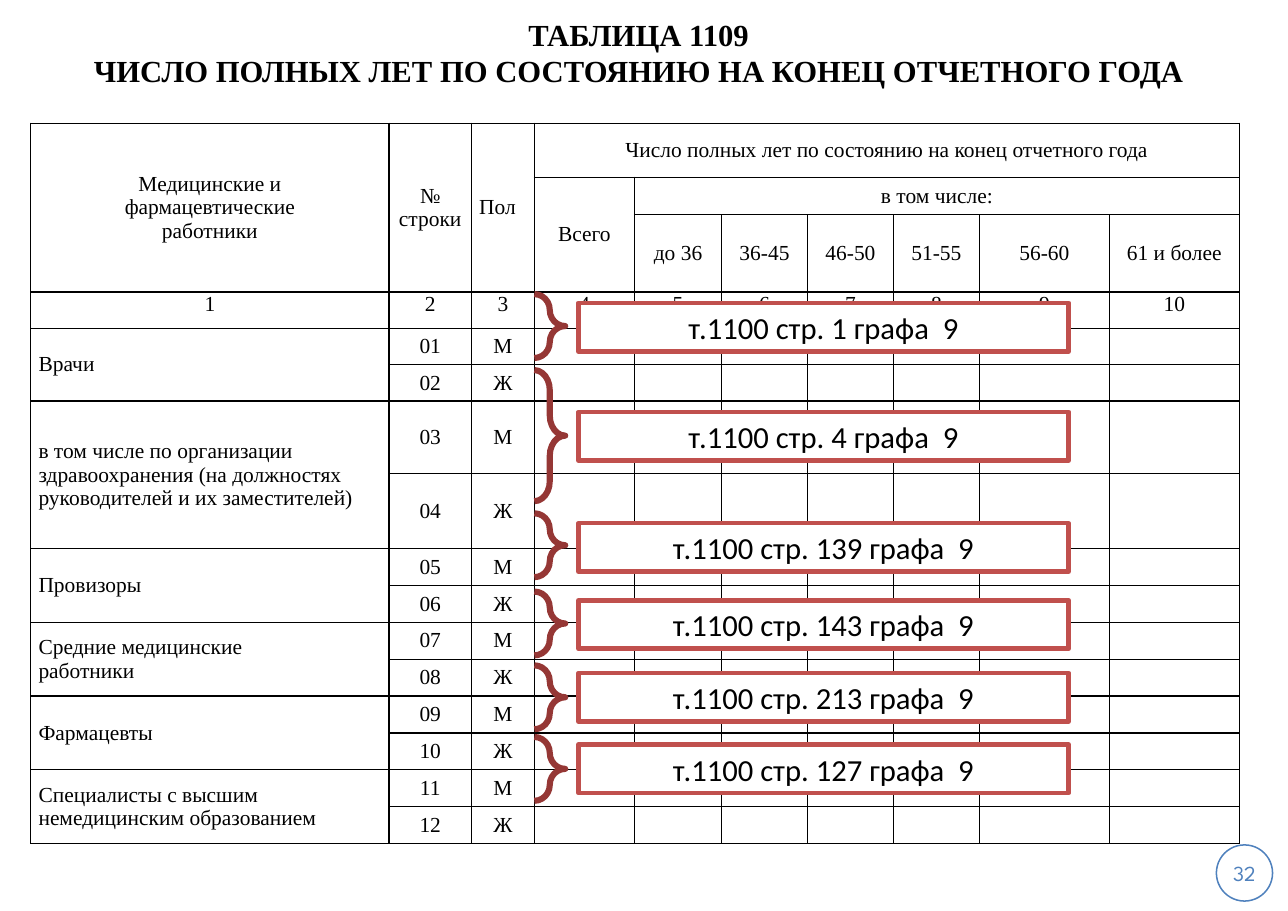
from lxml import etree
from pptx import Presentation
from pptx import util as u
from pptx.dml.color import RGBColor
from pptx.enum import shapes, text
from pptx.oxml.ns import qn

SERIF = "Times New Roman"
BLACK = "000000"
CENTER, LEFT = text.PP_ALIGN.CENTER, text.PP_ALIGN.LEFT
MID, TOP = text.MSO_ANCHOR.MIDDLE, text.MSO_ANCHOR.TOP
kinds = shapes.MSO_SHAPE


def rgb(tone):
    return RGBColor.from_string(tone)


def style(frame, words, size, face, tone=BLACK, align=CENTER, bold=False):
    frame.text = words
    frame.word_wrap = True
    for para in frame.paragraphs:
        para.alignment = align
        font = para.font
        font.size, font.name, font.bold = u.Pt(size), face, bold
        font.color.rgb = rgb(tone)


deck = Presentation()
deck.slide_width, deck.slide_height = u.Inches(11.69), u.Inches(8.27)
slide = deck.slides.add_slide(deck.slide_layouts[6])

# Page number
page = slide.shapes.add_shape(kinds.OVAL, u.Inches(11.04), u.Inches(7.67),
                              u.Inches(0.51), u.Inches(0.51))
page.shadow.inherit = False
page.fill.background()
page.line.color.rgb, page.line.width = rgb("4F81BD"), u.Pt(1)
frame = page.text_frame
frame.margin_left = frame.margin_right = frame.margin_top = frame.margin_bottom = 0
frame.vertical_anchor = MID
style(frame, "32", 14, "League Spartan", "4F81BD")

# Title
title = slide.shapes.add_textbox(0, 0, deck.slide_width, u.Inches(0.95))
title.text_frame.margin_left = 0
title.text_frame.vertical_anchor = MID
style(title.text_frame, "ТАБЛИЦА 1109\vЧИСЛО ПОЛНЫХ ЛЕТ ПО СОСТОЯНИЮ НА КОНЕЦ ОТЧЕТНОГО ГОДА",
      20, SERIF, bold=True)

# Table wording, keyed by row and column
words = {
    (0, 0): "Медицинские и\nфармацевтические\nработники",
    (0, 1): "№ строки",
    (0, 2): "Пол",
    (0, 3): "Число полных лет по состоянию на конец отчетного года",
    (1, 3): "Всего",
    (1, 4): "в том числе:",
}
ages = ["до 36", "36-45", "46-50", "51-55", "56-60", "61 и более"]
for col, age in enumerate(ages, 4):
    words[2, col] = age
for col in range(10):
    words[3, col] = str(col + 1)

staff = [
    "Врачи",
    "в том числе по организации здравоохранения (на должностях руководителей и их заместителей)",
    "Провизоры",
    "Средние медицинские\nработники",
    "Фармацевты",
    "Специалисты с высшим немедицинским образованием",
]
spans = [(0, 0, 2, 0), (0, 1, 2, 1), (0, 2, 2, 2), (0, 3, 0, 9), (1, 3, 2, 3), (1, 4, 1, 9)]
for i, group in enumerate(staff):
    top = 4 + 2 * i
    words[top, 0] = group
    spans.append((top, 0, top + 1, 0))
    for j, sex in enumerate("МЖ"):
        words[top + j, 1] = f"{2 * i + j + 1:02}"
        words[top + j, 2] = sex

# Table grid
wide = [3.25, 0.75, 0.57, 0.91, 0.79, 0.78, 0.78, 0.78, 1.18, 1.18]
high = [0.5] + [0.33] * 5 + [0.66, 0.68] + [0.33] * 8
high[2] = 0.65
high = [0.49, 0.34, 0.64] + [0.33] * 3 + [0.66, 0.68] + [0.335] * 8
grid = slide.shapes.add_table(len(high), len(wide), u.Inches(0.28), u.Inches(1.12),
                              u.Inches(sum(wide)), u.Inches(sum(high))).table
grid.first_row = grid.horz_banding = False
for col, width in zip(grid.columns, wide):
    col.width = u.Inches(width)
for row, height in zip(grid.rows, high):
    row.height = u.Inches(height)

for r in range(len(high)):
    for c in range(len(wide)):
        cell = grid.cell(r, c)
        cell.margin_left = cell.margin_right = u.Inches(0.07)
        cell.margin_top = cell.margin_bottom = 0
        cell.vertical_anchor = TOP if r == 3 else MID
        left = (r, c) == (0, 2) or (c == 0 and r > 3)
        style(cell.text_frame, words.get((r, c), ""), 14, SERIF,
              align=LEFT if left else CENTER)
        cell.fill.background()
        props = cell._tc.get_or_add_tcPr()
        for k, side in enumerate(("a:lnL", "a:lnR", "a:lnT", "a:lnB")):
            edge = etree.Element(qn(side), w=str(u.Pt(1)))
            ink = etree.SubElement(edge, qn("a:solidFill"))
            etree.SubElement(ink, qn("a:srgbClr"), val=BLACK)
            props.insert(k, edge)

for r1, c1, r2, c2 in spans:
    grid.cell(r1, c1).merge(grid.cell(r2, c2))

# Notes: source line, box top, brace top, brace height
notes = [
    (1, 2.75, 2.67, 0.58),
    (4, 3.74, 3.36, 1.19),
    (139, 4.75, 4.66, 0.58),
    (143, 5.45, 5.37, 0.58),
    (213, 6.11, 6.04, 0.58),
    (127, 6.76, 6.69, 0.58),
]
for line, top, start, tall in notes:
    box = slide.shapes.add_shape(kinds.RECTANGLE, u.Inches(5.25), u.Inches(top),
                                 u.Inches(4.45), u.Inches(0.44))
    box.shadow.inherit = False
    box.fill.solid()
    box.fill.fore_color.rgb = rgb("FFFFFF")
    box.line.color.rgb, box.line.width = rgb("C0504D"), u.Pt(3)
    box.text_frame.vertical_anchor = MID
    style(box.text_frame, f"т.1100 стр. {line} графа  9", 20, "Calibri")

    brace = slide.shapes.add_shape(kinds.RIGHT_BRACE, u.Inches(4.85), u.Inches(start),
                                   u.Inches(0.28), u.Inches(tall))
    brace.shadow.inherit = False
    brace.adjustments[0] = 0.65
    brace.fill.background()
    brace.line.color.rgb, brace.line.width = rgb("953735"), u.Pt(4)

deck.save("out.pptx")
